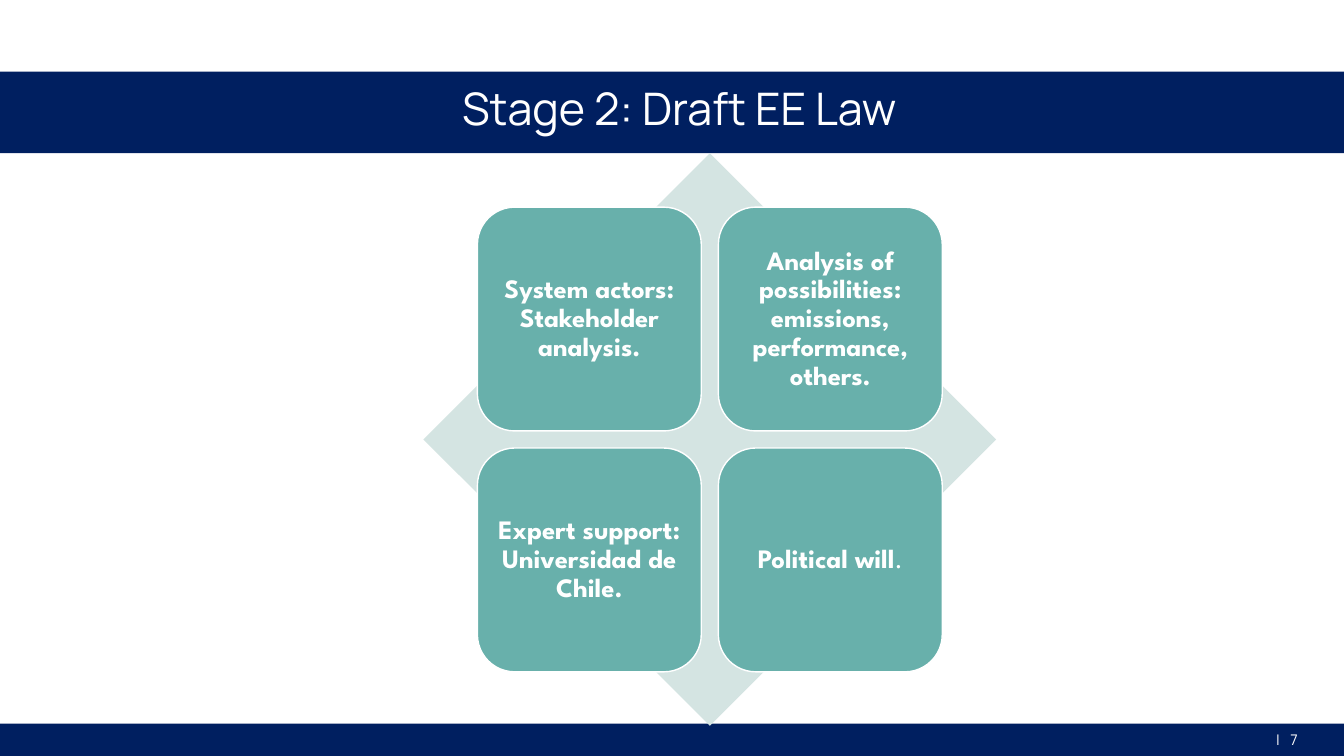
from pptx import Presentation
from pptx.dml.color import RGBColor
from pptx.enum.shapes import MSO_SHAPE as Shape
from pptx.enum.text import MSO_ANCHOR as Anchor, PP_ALIGN as Align
from pptx.util import Inches, Pt

TITLE = "Stage 2: Draft EE Law"
FACTORS = [
    [("System actors: Stakeholder analysis.", True)],
    [("Analysis of possibilities: emissions, performance, others.", True)],
    [("Expert support: Universidad de Chile.", True)],
    [("Political will", True), (".", False)],
]
PAGE_LABEL = ["|", " ", "7"]


class Theme:
    navy = RGBColor.from_string("001F60")
    teal = RGBColor.from_string("68B0AB")
    pale = RGBColor.from_string("D4E4E2")
    white = RGBColor.from_string("FFFFFF")
    body_font = "Manrope"
    card_font = "League Spartan"
    title_size = 32
    card_size = 19
    page_size = 10.5
    page_gap = 5.6


SLIDE_WIDTH, SLIDE_HEIGHT = 13.33, 7.5
DIAMOND_LEFT, DIAMOND_TOP, DIAMOND_SIZE = 4.2, 1.52, 5.68
CARD_SIZE, CARD_GAP = 2.22, 0.17


def add_panel(slide, kind, left, top, width, height, fill, line=None):
    shape = slide.shapes.add_shape(
        kind, Inches(left), Inches(top), Inches(width), Inches(height))
    shape.shadow.inherit = False
    shape.fill.solid()
    shape.fill.fore_color.rgb = fill
    if line is None:
        shape.line.fill.background()
    else:
        shape.line.color.rgb = line
        shape.line.width = Pt(1)
    return shape


def add_box(slide, left, top, width, height):
    return slide.shapes.add_textbox(
        Inches(left), Inches(top), Inches(width), Inches(height))


def write_text(shape, runs, *, font, size, align=Align.CENTER,
               line_spacing=1.0, space_after=0, inset=None):
    frame = shape.text_frame
    frame.word_wrap = True
    frame.vertical_anchor = Anchor.MIDDLE
    if inset is not None:
        frame.margin_left = frame.margin_right = Inches(inset)
        frame.margin_top = frame.margin_bottom = Inches(inset)
    paragraph = frame.paragraphs[0]
    paragraph.alignment = align
    paragraph.line_spacing = line_spacing
    paragraph.space_after = Pt(space_after)
    for text, bold in runs:
        run = paragraph.add_run()
        run.text = text
        run.font.name = font
        run.font.size = Pt(size)
        run.font.bold = bold
        run.font.color.rgb = Theme.white
    return paragraph


def add_matrix(slide):
    add_panel(slide, Shape.DIAMOND, DIAMOND_LEFT, DIAMOND_TOP,
              DIAMOND_SIZE, DIAMOND_SIZE, Theme.pale)
    margin = (DIAMOND_SIZE - 2 * CARD_SIZE - CARD_GAP) / 2
    step = CARD_SIZE + CARD_GAP
    for index, runs in enumerate(FACTORS):
        row, column = divmod(index, 2)
        card = add_panel(slide, Shape.ROUNDED_RECTANGLE,
                         DIAMOND_LEFT + margin + column * step,
                         DIAMOND_TOP + margin + row * step,
                         CARD_SIZE, CARD_SIZE, Theme.teal, Theme.white)
        write_text(card, runs, font=Theme.card_font, size=Theme.card_size,
                   line_spacing=0.9, inset=0.08)


def add_page_label(slide):
    paragraph = write_text(add_box(slide, 12.18, 7.17, 0.79, 0.33),
                           [(text, False) for text in PAGE_LABEL],
                           font=Theme.body_font, size=Theme.page_size,
                           align=Align.RIGHT)
    gap = paragraph.runs[1]
    gap.font._element.set("spc", str(round(Theme.page_gap * 100)))


def main():
    presentation = Presentation()
    presentation.slide_width = Inches(SLIDE_WIDTH)
    presentation.slide_height = Inches(SLIDE_HEIGHT)
    slide = presentation.slides.add_slide(presentation.slide_layouts[6])
    for top, height in [(7.18, 0.32), (0.71, 0.81)]:
        add_panel(slide, Shape.RECTANGLE, 0, top, SLIDE_WIDTH, height, Theme.navy)
    write_text(add_box(slide, 0.61, 0.7, 12.26, 0.81), [(TITLE, False)],
               font=Theme.body_font, size=Theme.title_size,
               line_spacing=0.9, space_after=6)
    add_matrix(slide)
    add_page_label(slide)
    presentation.save("out.pptx")


if __name__ == "__main__":
    main()
